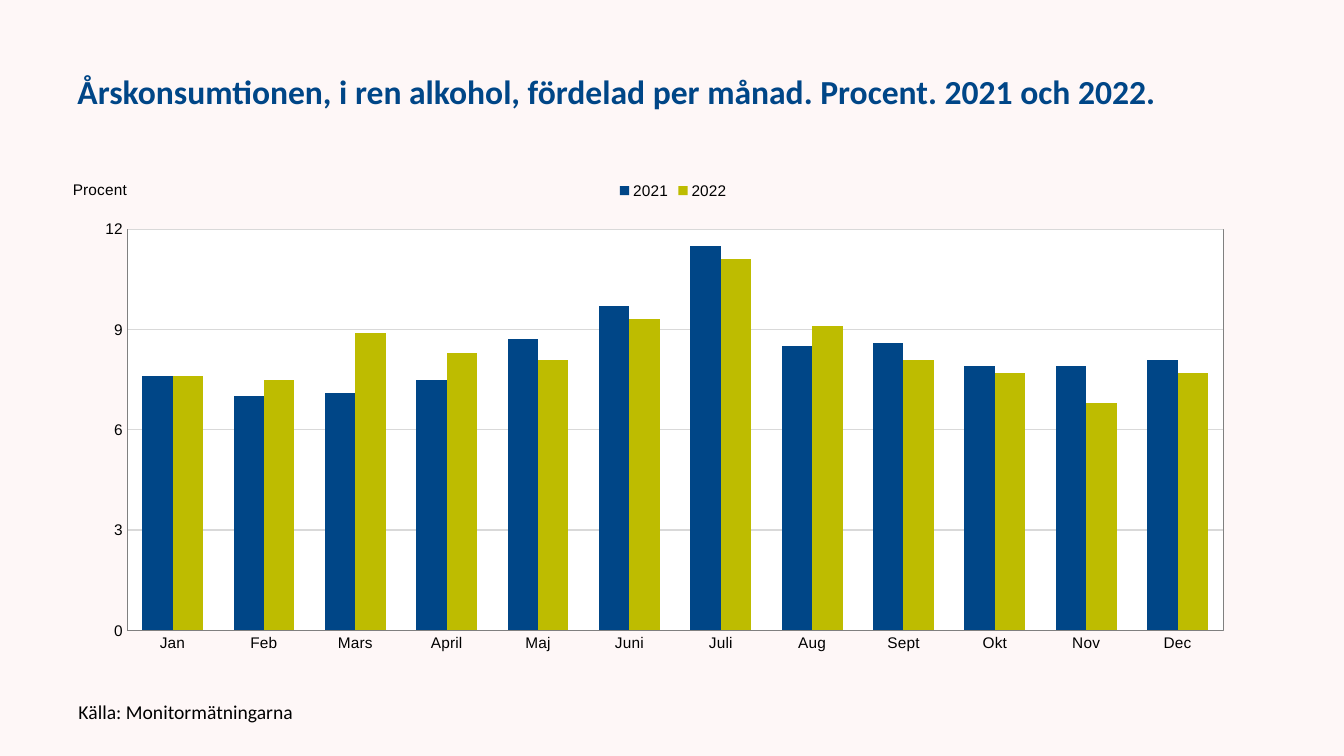
from lxml import etree
from pptx import Presentation
from pptx.chart.data import CategoryChartData
from pptx.dml.color import RGBColor
from pptx.enum.chart import XL_CHART_TYPE, XL_LEGEND_POSITION, XL_TICK_MARK
from pptx.enum.text import MSO_ANCHOR
from pptx.oxml import parse_xml
from pptx.oxml.ns import nsdecls, qn
from pptx.util import Pt

COLUMNS = XL_CHART_TYPE.COLUMN_CLUSTERED
LEGEND_TOP = XL_LEGEND_POSITION.TOP
NO_TICK = XL_TICK_MARK.NONE
MIDDLE = MSO_ANCHOR.MIDDLE

COLORS = {
    "background": "FEF7F7",
    "blue": "004687",
    "olive": "BEBC00",
    "text": "000000",
    "axis": "808080",
    "grid": "D9D9D9",
    "plot": "FFFFFF",
}
MONTHS = ["Jan", "Feb", "Mars", "April", "Maj", "Juni",
          "Juli", "Aug", "Sept", "Okt", "Nov", "Dec"]
YEARS = [
    ("2021", "blue", [7.6, 7, 7.1, 7.5, 8.7, 9.7, 11.5, 8.5, 8.6, 7.9, 7.9, 8.1]),
    ("2022", "olive", [7.6, 7.5, 8.9, 8.3, 8.1, 9.3, 11.1, 9.1, 8.1, 7.7, 6.8, 7.7]),
]


def color(name):
    return RGBColor.from_string(COLORS[name])


def style_font(font, size, name, shade="text", bold=False):
    font.size = Pt(size)
    font.name = name
    font.bold = bold
    font.color.rgb = color(shade)


def style_line(line, shade, width):
    line.color.rgb = color(shade)
    line.width = Pt(width)


def add_text(page, box, text, size, shade="text", bold=False):
    """One line of text, centred vertically in its box."""
    frame = page.shapes.add_textbox(*map(Pt, box)).text_frame
    frame.word_wrap = True
    frame.vertical_anchor = MIDDLE
    para = frame.paragraphs[0]
    para.line_spacing = 0.9
    span = para.add_run()
    span.text = text
    style_font(span.font, size, "Calibri", shade, bold)


def set_layout(element, index, settings):
    """Give a chart part a fixed place, in fractions of the chart."""
    for old in element.findall(qn("c:layout")):
        element.remove(old)
    layout = etree.Element(qn("c:layout"))
    manual = etree.SubElement(layout, qn("c:manualLayout"))
    for tag, value in settings.items():
        etree.SubElement(manual, qn(f"c:{tag}")).set("val", str(value))
    element.insert(index, layout)


def style_plot_area(chart):
    plot_area = chart.element.find(".//" + qn("c:plotArea"))
    set_layout(plot_area, 0, {
        "layoutTarget": "inner", "xMode": "edge", "yMode": "edge",
        "x": 0.049, "y": 0.118, "w": 0.905, "h": 0.804})
    plot_area.append(parse_xml(
        f'<c:spPr {nsdecls("c", "a")}>'
        f'<a:solidFill><a:srgbClr val="{COLORS["plot"]}"/></a:solidFill>'
        f'<a:ln w="{Pt(0.25)}"><a:solidFill><a:srgbClr val="{COLORS["axis"]}"/>'
        '</a:solidFill></a:ln></c:spPr>'))


def style_axes(chart):
    for axis in (chart.category_axis, chart.value_axis):
        axis.major_tick_mark = axis.minor_tick_mark = NO_TICK
        style_font(axis.tick_labels.font, 11, "Arial")
        style_line(axis.format.line, "axis", 0.25)

    percent = chart.value_axis
    percent.minimum_scale, percent.maximum_scale, percent.major_unit = 0, 12, 3
    percent.tick_labels.number_format = "0"
    percent.tick_labels.number_format_is_linked = False
    style_line(percent.major_gridlines.format.line, "grid", 0.75)

    # Unit label, level, in the top left corner
    span = percent.axis_title.text_frame.paragraphs[0].add_run()
    span.text = "Procent"
    style_font(span.font, 11, "Arial")
    title = chart.element.find(".//" + qn("c:valAx")).find(qn("c:title"))
    body = title.find(".//" + qn("a:bodyPr"))
    body.set("rot", "0")
    body.set("vert", "horz")
    set_layout(title, 1, {"xMode": "edge", "yMode": "edge", "x": 0.002, "y": 0.012})


def add_month_chart(page, box):
    data = CategoryChartData(number_format="0.0")
    data.categories = MONTHS
    for year, _, values in YEARS:
        data.add_series(year, values)
    chart = page.shapes.add_chart(COLUMNS, *map(Pt, box), data).chart
    chart.has_title = False
    style_font(chart.font, 11, "Arial")

    # Columns
    plot = chart.plots[0]
    plot.gap_width = 100
    plot.overlap = 0
    plot.vary_by_categories = False
    for series, (_, shade, _) in zip(plot.series, YEARS):
        series.format.fill.solid()
        series.format.fill.fore_color.rgb = color(shade)

    # Legend
    chart.has_legend = True
    chart.legend.position = LEGEND_TOP
    chart.legend.include_in_layout = False
    style_font(chart.legend.font, 11, "Arial")

    style_axes(chart)
    style_plot_area(chart)


def build_page(deck):
    page = deck.slides.add_slide(deck.slide_layouts[6])
    page.background.fill.solid()
    page.background.fill.fore_color.rgb = color("background")
    add_text(page, (48.24, 21.6, 864, 90),
             "Årskonsumtionen, i ren alkohol, fördelad per månad. Procent. 2021 och 2022.",
             24, "blue", True)
    add_month_chart(page, (48.24, 121.7, 865.4, 356.4))
    add_text(page, (49, 496, 432, 26.6), "Källa: Monitormätningarna", 14)


def main():
    deck = Presentation()
    deck.slide_width, deck.slide_height = Pt(960), Pt(540)
    build_page(deck)
    deck.save("out.pptx")


if __name__ == "__main__":
    main()
